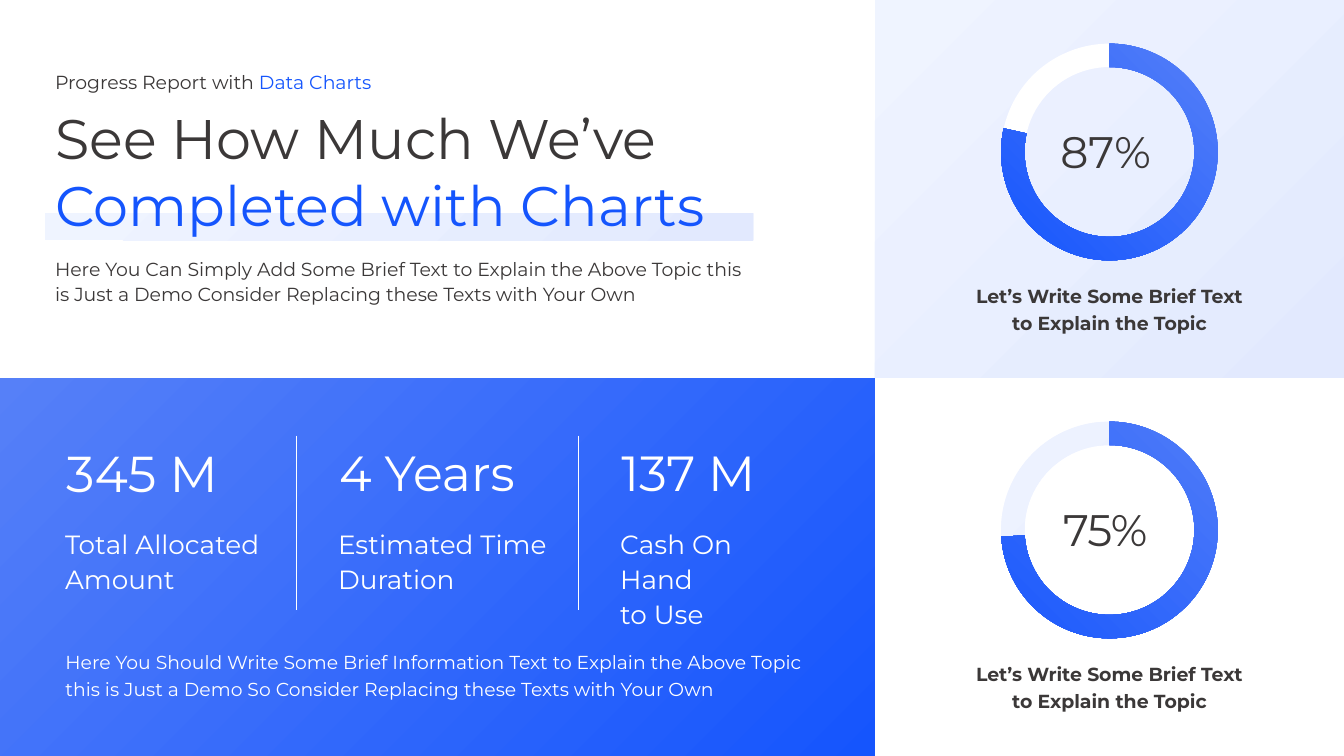
import pptx
import pptx.util
import pptx.dml.color
import pptx.enum.shapes
import pptx.enum.text
import pptx.oxml.ns
from lxml import etree
from pptx.util import Cm

COLORS = {"ink": "3B3838", "blue": "1555FD", "sky": "5680F8",
          "mist": "E2E9FE", "ice": "EFF4FF", "white": "FFFFFF"}
DEEP = ("blue", "sky")
PALE = ("mist", "ice")
SHAPE = pptx.enum.shapes.MSO_SHAPE
CENTER = pptx.enum.text.PP_ALIGN.CENTER
WIDTH, HEIGHT = 33.87, 19.05
LEFT_W, ROW_H = 22.05, HEIGHT / 2
qn = pptx.oxml.ns.qn


def rgb(name):
    return pptx.dml.color.RGBColor.from_string(COLORS[name])


def paint(s, fill, focus="right"):
    """Fill with one colour name, or a pair spreading from a bottom corner."""
    s.shadow.inherit = False
    s.line.fill.background()
    if isinstance(fill, str):
        s.fill.solid()
        s.fill.fore_color.rgb = rgb(fill)
        return
    s.fill.gradient()
    for stop, name, position in zip(s.fill.gradient_stops, fill, (0, 1)):
        stop.color.rgb = rgb(name)
        stop.position = position
    grad = s._element.spPr.find(qn("a:gradFill"))
    grad.remove(grad.find(qn("a:lin")))
    radial = etree.SubElement(grad, qn("a:path"), {"path": "circle"})
    left, right = ("100000", "0") if focus == "right" else ("0", "100000")
    etree.SubElement(radial, qn("a:fillToRect"),
                     {"l": left, "t": "100000", "r": right, "b": "0"})


def add_box(sl, kind, x, y, w, h, fill, focus="right"):
    s = sl.shapes.add_shape(kind, Cm(x), Cm(y), Cm(w), Cm(h))
    paint(s, fill, focus)
    return s


def add_text(sl, x, y, w, h, lines, size, color="ink", bold=False,
             align=None, leading=None, tracking=None, wrap=False):
    """Each line is a string or a list of (text, colour) runs."""
    s = sl.shapes.add_textbox(Cm(x), Cm(y), Cm(w), Cm(h))
    tf = s.text_frame
    tf.word_wrap = wrap
    tf.auto_size = pptx.enum.text.MSO_AUTO_SIZE.SHAPE_TO_FIT_TEXT
    font_format = {"name": "Montserrat", "size": pptx.util.Pt(size), "bold": bold}
    line_format = {"alignment": align,
                   "line_spacing": pptx.util.Pt(leading) if leading else None}
    for i, line in enumerate(lines):
        p = tf.paragraphs[0] if i == 0 else tf.add_paragraph()
        for key, value in line_format.items():
            setattr(p, key, value)
        for text, run_color in ([(line, color)] if isinstance(line, str) else line):
            r = p.add_run()
            r.text = text
            for key, value in font_format.items():
                setattr(r.font, key, value)
            r.font.color.rgb = rgb(run_color)
            if tracking:
                r.font._element.set("spc", str(round(tracking * 100)))


def add_header(sl, x, y):
    left = x + 1.14
    add_box(sl, SHAPE.RECTANGLE, left, y + 5.38, 17.84, 0.67, PALE)
    add_text(sl, left, y + 1.65, 8.66, 0.84,
             [[("Progress Report with ", "ink"), ("Data Charts", "blue")]], 13.5)
    add_text(sl, left, y + 2.49, 18.06, 3.66,
             ["See How Much We’ve", [("Completed with Charts", "blue")]], 39.8)
    add_text(sl, left, y + 6.3, 18.44, 1.5,
             ["Here You Can Simply Add Some Brief Text to Explain the Above Topic this",
              "is Just a Demo Consider Replacing these Texts with Your Own"],
             13.5, leading=18)


def add_stats(sl, x, y, w, h):
    add_box(sl, SHAPE.RECTANGLE, x, y, w, h, DEEP)
    # Column offset, figure, its size and width, label, its width
    stats = [(1.42, "345 M", 36, 4.57, ["Total Allocated", "Amount"], 5.61),
             (8.3, "4 Years", 35.2, 5.46, ["Estimated Time", "Duration"], 5.82),
             (15.41, "137 M", 35.2, 4.14, ["Cash On Hand", "to Use"], 5.31)]
    for i, (dx, figure, size, figure_w, label, label_w) in enumerate(stats):
        left = x + dx
        add_text(sl, left, y + 1.5, figure_w, 1.75, [figure], size, "white")
        add_text(sl, left - 0.03, y + 3.58, label_w, 1.9, label, 18.8, "white",
                 leading=25)
        if i:
            add_divider(sl, left - 0.82, y + 1.45, 4.39)
    # Closing note
    add_text(sl, x + 1.4, y + 6.65, 20.14, 1.55,
             ["Here You Should Write Some Brief Information Text to Explain the Above Topic",
              "this is Just a Demo So Consider Replacing these Texts with Your Own"],
             13.4, "white", leading=19, wrap=True)


def add_divider(sl, x, y, length):
    s = sl.shapes.add_connector(pptx.enum.shapes.MSO_CONNECTOR.STRAIGHT,
                                Cm(x), Cm(y), Cm(x), Cm(y + length))
    s.line.color.rgb = rgb("white")
    s.line.width = pptx.util.Pt(0.75)
    etree.SubElement(s._element.spPr, qn("a:effectLst"))


def add_gauge(sl, x, y, w, h, value, value_w, track, turn=0, panel=None,
              tracking=None):
    if panel:
        add_box(sl, SHAPE.RECTANGLE, x, y, w, h, panel)
    mid = x + w / 2
    size, thickness = 5.46, 0.108
    ring = (mid - size / 2, y + 1.1, size, size)
    s = add_box(sl, SHAPE.DONUT, *ring, track)
    s.adjustments[0] = thickness
    # The arc starts at the top; angles count 0.6 per degree
    s = add_box(sl, SHAPE.BLOCK_ARC, *ring, DEEP, "left")
    s.rotation = -turn
    for i, adj in enumerate((0.6 * (270 + turn), 0.6 * 192.6, thickness)):
        s.adjustments[i] = adj
    add_text(sl, mid - value_w / 2, y + 3.02, value_w, 1.6, [value], 31.5,
             tracking=tracking)
    add_text(sl, mid - 3.71, y + 6.96, 7.42, 1.55,
             ["Let’s Write Some Brief Text", "to Explain the Topic"],
             13.5, bold=True, align=CENTER, leading=19)


def main():
    prs = pptx.Presentation()
    prs.slide_width, prs.slide_height = Cm(WIDTH), Cm(HEIGHT)
    sl = prs.slides.add_slide(prs.slide_layouts[6])
    right_w = WIDTH - LEFT_W
    add_header(sl, 0, 0)
    add_stats(sl, 0, ROW_H, LEFT_W, ROW_H)
    add_gauge(sl, LEFT_W, 0, right_w, ROW_H, "87%", 2.97, "white", panel=PALE)
    add_gauge(sl, LEFT_W, ROW_H, right_w, ROW_H, "75%", 2.84, PALE,
              turn=16.2, tracking=-0.6)
    prs.save("out.pptx")


if __name__ == "__main__":
    main()
